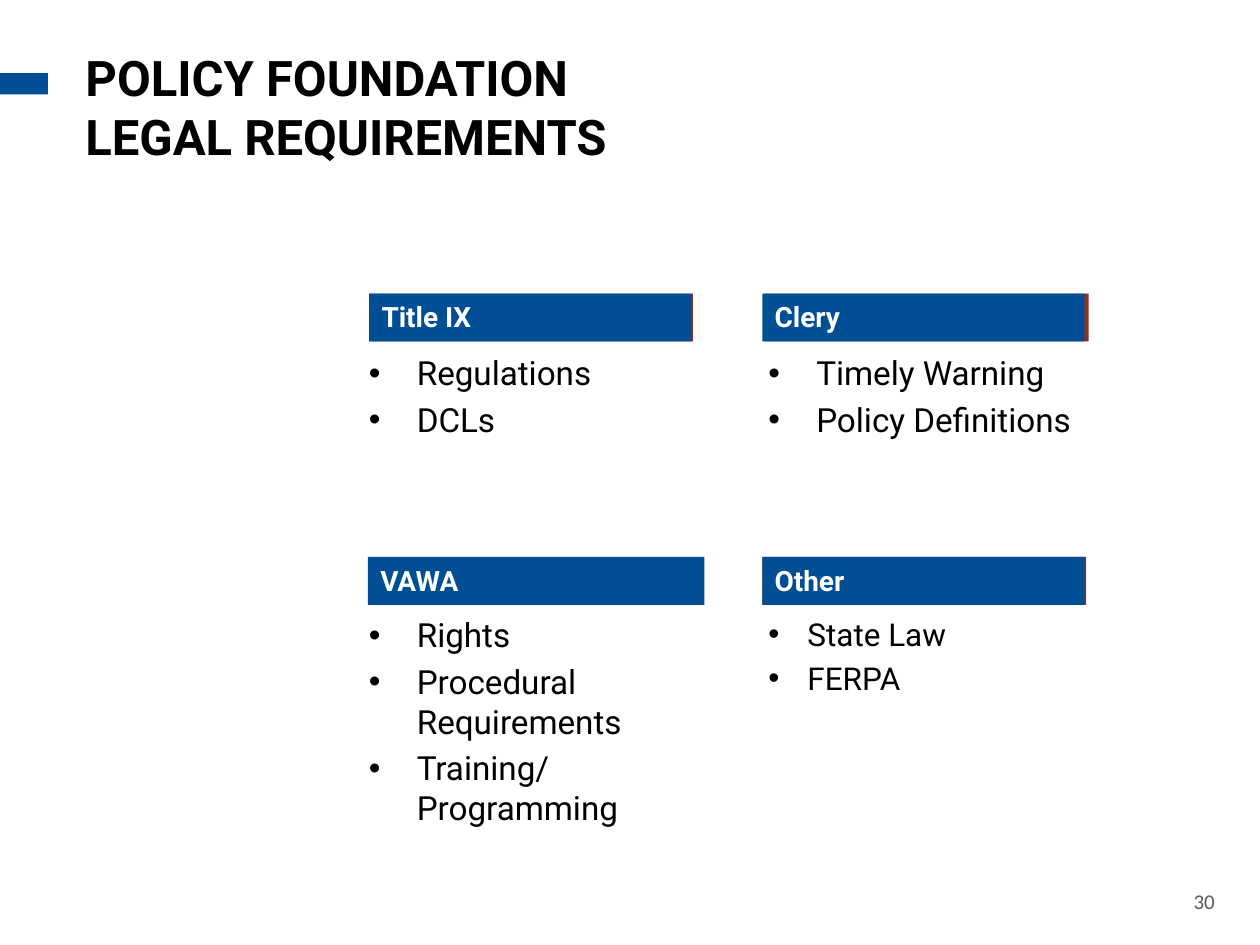
from lxml import etree
from pptx import Presentation
from pptx.dml.color import RGBColor
from pptx.enum import shapes, text
from pptx.oxml.ns import qn
from pptx.util import Inches, Pt

BLUE = RGBColor(0x00, 0x4E, 0x93)
RUST = RGBColor(0x9A, 0x2C, 0x1A)
WHITE = RGBColor(0xFF, 0xFF, 0xFF)
BLACK = RGBColor(0x00, 0x00, 0x00)
GREY = RGBColor(0x59, 0x59, 0x59)

TITLE = "POLICY FOUNDATION LEGAL REQUIREMENTS"
PAGE = "30"

# Banner x and width, rust edge x (None if covered), list x and width, size, indent
SECTIONS = [
    dict(row=0, head="Title IX", items=["Regulations", "DCLs"],
         banner=(2.93, 2.56), edge=2.93, body=(2.83, 2.75), size=19, indent=0.38),
    dict(row=0, head="Clery", items=["Timely Warning", "Policy Definitions"],
         banner=(6.05, 2.56), edge=6.07, body=(6, 2.92), size=19, indent=0.38),
    dict(row=1, head="VAWA",
         items=["Rights", "Procedural Requirements", "Training/ Programming"],
         banner=(2.92, 2.67), edge=None, body=(2.83, 3.08), size=19, indent=0.38),
    dict(row=1, head="Other", items=["State Law", "FERPA"],
         banner=(6.05, 2.56), edge=6.05, body=(6, 2.75), size=18, indent=0.31),
]
BANNER_TOPS = (2.33, 4.42)
BODY_TOPS = (2.75, 4.83)
BANNER_H, BODY_H, EDGE_W = 0.38, 1.33, 2.57

prs = Presentation()
prs.slide_width, prs.slide_height = Inches(10), Inches(7.5)
s = prs.slides.add_slide(prs.slide_layouts[6])


def add_bar(x, y, w, h, color):
    sp = s.shapes.add_shape(shapes.MSO_SHAPE.RECTANGLE,
                            Inches(x), Inches(y), Inches(w), Inches(h))
    sp.shadow.inherit = False
    sp.fill.solid()
    sp.fill.fore_color.rgb = color
    sp.line.fill.background()
    return sp


def add_box(x, y, w, h):
    return s.shapes.add_textbox(Inches(x), Inches(y), Inches(w), Inches(h))


def write(sp, lines, size, color, bold=False, font="Roboto",
          align=text.PP_ALIGN.LEFT, indent=None):
    tf = sp.text_frame
    tf.word_wrap = True
    tf.vertical_anchor = text.MSO_ANCHOR.TOP
    for i, line in enumerate(lines):
        p = tf.add_paragraph() if i else tf.paragraphs[0]
        p.alignment = align
        if i:
            p.space_before = Pt(size * 0.2)
        if indent:
            pPr = p._p.get_or_add_pPr()
            pPr.set("marL", str(Inches(indent)))
            pPr.set("indent", str(-Inches(indent)))
            etree.SubElement(pPr, qn("a:buFont")).set("typeface", "Arial")
            etree.SubElement(pPr, qn("a:buChar")).set("char", "•")
        r = p.add_run()
        r.text = line
        r.font.name, r.font.size, r.font.bold = font, Pt(size), bold
        r.font.color.rgb = color


# Title marker and page number
add_bar(-0.01, 0.58, 0.39, 0.17, BLUE)
write(add_box(9.26, 7, 0.48, 0.3), [PAGE], 12, GREY, font="Calibri",
      align=text.PP_ALIGN.RIGHT)

# Four sections: rust edge, banner, bullet list
for sec in SECTIONS:
    top = BANNER_TOPS[sec["row"]]
    if sec["edge"] is not None:
        add_bar(sec["edge"], top, EDGE_W, BANNER_H, RUST)
    x, w = sec["banner"]
    write(add_bar(x, top, w, BANNER_H, BLUE), [sec["head"]], 16, WHITE, bold=True)
    x, w = sec["body"]
    write(add_box(x, BODY_TOPS[sec["row"]], w, BODY_H), sec["items"],
          sec["size"], BLACK, indent=sec["indent"])

# Title
write(add_box(0.58, 0.33, 4.42, 1), [TITLE], 28, BLACK, bold=True)

prs.save("out.pptx")
